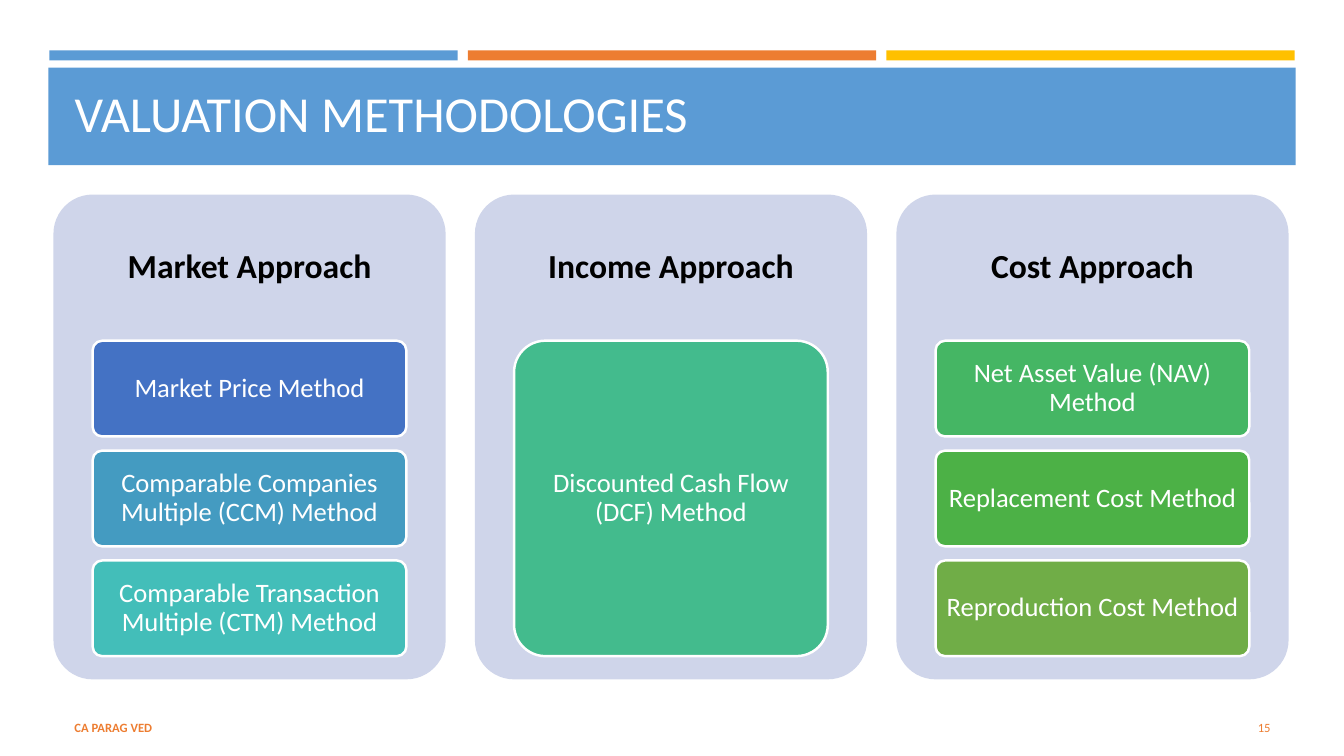
from pptx import Presentation
from pptx.dml.color import RGBColor
from pptx.enum.shapes import MSO_SHAPE
from pptx.enum.text import MSO_ANCHOR, PP_ALIGN
from pptx.util import Inches, Pt

RECTANGLE, ROUNDED = MSO_SHAPE.RECTANGLE, MSO_SHAPE.ROUNDED_RECTANGLE
MIDDLE = MSO_ANCHOR.MIDDLE
LEFT, CENTER, RIGHT = PP_ALIGN.LEFT, PP_ALIGN.CENTER, PP_ALIGN.RIGHT
WHITE, BLACK, BLUE, ORANGE, GOLD = "FFFFFF", "000000", "5B9BD5", "ED7D31", "FFC000"
PANEL_FILL = "CFD5EA"

# Panel columns and the method rows inside them, in inches
PANEL_LEFT, PANEL_TOP, PANEL_WIDTH, PANEL_HEIGHT = 0.53, 1.93, 3.89, 4.81
PANEL_STEP = 4.18
HEADING_HEIGHT = 0.3 * PANEL_HEIGHT
METHOD_WIDTH = 0.8 * PANEL_WIDTH
METHOD_TOP, METHODS_HEIGHT, METHOD_GAP = 3.38, 3.13, 0.14

APPROACHES = [
    ("Market Approach", [
        ("Market Price Method", "4472C4"),
        ("Comparable Companies Multiple (CCM) Method", "449BC1"),
        ("Comparable Transaction Multiple (CTM) Method", "43BEB9"),
    ]),
    ("Income Approach", [("Discounted Cash Flow (DCF) Method", "43BB8D")]),
    ("Cost Approach", [
        ("Net Asset Value (NAV) Method", "45B664"),
        ("Replacement Cost Method", "4CB146"),
        ("Reproduction Cost Method", "70AD47"),
    ]),
]


def add_block(kind, left, top, width, height, fill):
    """Add a flat, borderless preset shape, measured in inches."""
    block = slide.shapes.add_shape(
        kind, Inches(left), Inches(top), Inches(width), Inches(height))
    block.shadow.inherit = False
    block.fill.solid()
    block.fill.fore_color.rgb = RGBColor.from_string(fill)
    block.line.fill.background()
    if kind == ROUNDED:
        block.adjustments[0] = 0.1
    return block


def write(shape, text, size, color, align, bold=False, spacing=0.9):
    """Put one vertically centred paragraph into the shape."""
    frame = shape.text_frame
    frame.word_wrap = True
    frame.vertical_anchor = MIDDLE
    paragraph = frame.paragraphs[0]
    paragraph.text = text
    paragraph.alignment = align
    paragraph.line_spacing = spacing
    paragraph.font.name = "Calibri"
    paragraph.font.size = Pt(size)
    paragraph.font.bold = bold
    paragraph.font.color.rgb = RGBColor.from_string(color)


presentation = Presentation()
presentation.slide_width = Inches(13.33)
presentation.slide_height = Inches(7.5)
slide = presentation.slides.add_slide(presentation.slide_layouts[5])

# Accent strips and title band
for column, color in enumerate([BLUE, ORANGE, GOLD]):
    add_block(RECTANGLE, 0.49 + 4.15 * column, 0.5, 4.05, 0.1, color)
add_block(RECTANGLE, 0.48, 0.67, 12.37, 0.97, BLUE)

title = slide.shapes.title
title.left, title.top = Inches(0.64), Inches(0.74)
title.width, title.height = Inches(12.06), Inches(0.83)
write(title, "VALUATION METHODOLOGIES", 36, WHITE, LEFT)
title.element.getparent().append(title.element)  # bring in front of the band

# One panel per approach, its methods sharing the same height
for column, (approach, methods) in enumerate(APPROACHES):
    left = PANEL_LEFT + column * PANEL_STEP
    add_block(ROUNDED, left, PANEL_TOP, PANEL_WIDTH, PANEL_HEIGHT, PANEL_FILL)
    heading = slide.shapes.add_textbox(
        Inches(left), Inches(PANEL_TOP), Inches(PANEL_WIDTH), Inches(HEADING_HEIGHT))
    write(heading, approach, 24, BLACK, CENTER, bold=True)

    method_left = left + (PANEL_WIDTH - METHOD_WIDTH) / 2
    method_height = (METHODS_HEIGHT + METHOD_GAP) / len(methods) - METHOD_GAP
    for row, (method, color) in enumerate(methods):
        method_top = METHOD_TOP + row * (method_height + METHOD_GAP)
        box = add_block(ROUNDED, method_left, method_top, METHOD_WIDTH, method_height, color)
        box.line.color.rgb = RGBColor.from_string(WHITE)
        box.line.width = Pt(1.75)
        frame = box.text_frame
        frame.margin_left = frame.margin_right = Inches(0.05)
        frame.margin_top = frame.margin_bottom = Inches(0.04)
        write(box, method, 19, WHITE, CENTER)

# Footer
for text, left, width, align, bold in [
    ("15", 11.55, 1.15, RIGHT, False),
    ("CA PARAG VED", 0.64, 7.56, LEFT, True),
]:
    footer = slide.shapes.add_textbox(Inches(left), Inches(7.02), Inches(width), Inches(0.4))
    write(footer, text, 9, ORANGE, align, bold, spacing=1.0)

presentation.save("out.pptx")
